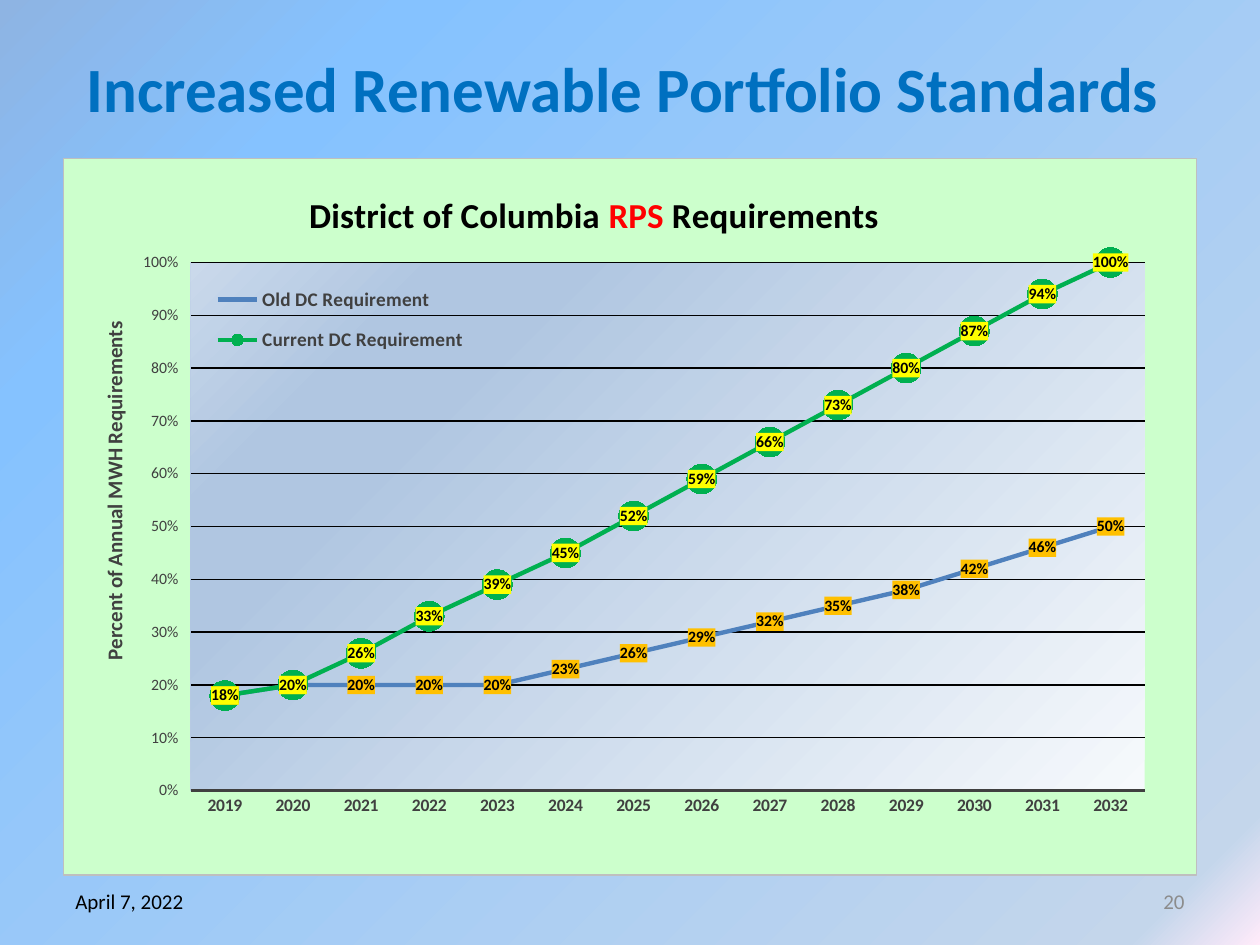
from pptx import Presentation
from pptx.chart.data import CategoryChartData
from pptx.dml.color import RGBColor
from pptx.enum.chart import (XL_CHART_TYPE, XL_LABEL_POSITION, XL_LEGEND_POSITION,
                             XL_MARKER_STYLE, XL_TICK_MARK)
from pptx.enum.text import MSO_ANCHOR, PP_ALIGN
from pptx.oxml import parse_xml
from pptx.oxml.ns import nsdecls
from pptx.util import Inches, Pt

FONT = "Calibri"
COLORS = {
    "heading": "0070C0", "black": "000000", "gray": "404040", "number": "8C8C8C",
    "red": "FF0000", "panel": "CCFFCC", "border": "BFBFBF", "old": "4F81BD",
    "current": "00B050", "old_label": "FFC000", "current_label": "FFFF00",
}
BACKGROUND = [(0, "8EB4E3"), (19, "85C2FF"), (94, "C4D6EB"), (100, "FFEBFA")]
PLOT_GRADIENT = [(0, "F6F9FC"), (74, "B0C6E1"), (83, "B0C6E1"), (100, "CAD9EB")]

HEADING = "Increased Renewable Portfolio Standards "
CHART_TITLE = [("District of Columbia ", "black"), ("RPS", "red"), (" Requirements", "black")]
AXIS_TITLE = [("Percent of Annual MWH Requirements", "gray")]
YEARS = [str(year) for year in range(2019, 2033)]
REQUIREMENTS = [
    ("Old DC Requirement", "old",
     [.18, .2, .2, .2, .2, .23, .26, .29, .32, .35, .38, .42, .46, .5]),
    ("Current DC Requirement", "current",
     [.18, .2, .26, .33, .39, .45, .52, .59, .66, .73, .8, .87, .94, 1]),
]
# text, left, color, alignment
FOOTERS = [("April 7, 2022", 0.5, "black", PP_ALIGN.LEFT),
           ("20", 7.17, "number", PP_ALIGN.RIGHT)]
CHART_WIDTH, CHART_HEIGHT = 9, 5.7


def set_values(target, **values):
    for name, value in values.items():
        setattr(target, name, value)


def style_font(font, size, color, bold=False):
    set_values(font, name=FONT, size=Pt(size), bold=bold)
    font.color.rgb = RGBColor.from_string(COLORS[color])


def style_line(line, color, width):
    line.color.rgb = RGBColor.from_string(COLORS[color])
    line.width = Pt(width)


def gradient(stops, angle):
    marks = "".join(f'<a:gs pos="{pos * 1000}"><a:srgbClr val="{color}"/></a:gs>'
                    for pos, color in stops)
    return (f'<a:gradFill {nsdecls("a")} rotWithShape="1"><a:gsLst>{marks}</a:gsLst>'
            f'<a:lin ang="{angle * 60000}" scaled="0"/></a:gradFill>')


def solid(color):
    return f'<a:solidFill><a:srgbClr val="{COLORS[color]}"/></a:solidFill>'


def chart_fill(fill, line="<a:noFill/>"):
    """Shape properties for chart parts that have no public fill."""
    return parse_xml(f'<c:spPr {nsdecls("c", "a")}>{fill}<a:ln w="9525">{line}</a:ln></c:spPr>')


def place(part, left, top, width=None, height=None, inner=False):
    """Position a chart part, in inches from the chart's top left corner."""
    for old in part.xpath("c:layout"):
        part.remove(old)
    values = [("layoutTarget", "inner")] if inner else []
    values += [("xMode", "edge"), ("yMode", "edge"),
               ("x", left / CHART_WIDTH), ("y", top / CHART_HEIGHT)]
    if width:
        values += [("w", width / CHART_WIDTH), ("h", height / CHART_HEIGHT)]
    items = "".join(f'<c:{name} val="{value}"/>' for name, value in values)
    layout = parse_xml(f'<c:layout {nsdecls("c")}><c:manualLayout>{items}'
                       '</c:manualLayout></c:layout>')
    overlay = part.xpath("c:overlay")
    if overlay:
        overlay[0].addprevious(layout)
    else:
        part.insert(0, layout)


def write_title(title, runs, size):
    paragraph = title.text_frame.paragraphs[0]
    for text, color in runs:
        run = paragraph.add_run()
        run.text = text
        style_font(run.font, size, color, True)


def style_axes(chart):
    years, percent = chart.category_axis, chart.value_axis
    years.major_tick_mark = XL_TICK_MARK.NONE
    style_font(years.tick_labels.font, 10, "gray", True)
    style_line(years.format.line, "gray", 1.5)
    set_values(percent, minimum_scale=0, maximum_scale=1, major_unit=0.1,
               major_tick_mark=XL_TICK_MARK.OUTSIDE, has_major_gridlines=True)
    set_values(percent.tick_labels, number_format="0%", number_format_is_linked=False)
    style_font(percent.tick_labels.font, 9, "gray")
    percent.format.line.fill.background()
    style_line(percent.major_gridlines.format.line, "black", 0.75)
    write_title(percent.axis_title, AXIS_TITLE, 12)


def style_series(series, key):
    series.smooth = False
    style_line(series.format.line, key, 2.5)
    if key == "current":
        set_values(series.marker, style=XL_MARKER_STYLE.CIRCLE, size=17)
        series.marker.format.fill.solid()
        series.marker.format.fill.fore_color.rgb = RGBColor.from_string(COLORS[key])
        series.marker.format.line.fill.background()
    else:
        series.marker.style = XL_MARKER_STYLE.NONE
    labels = series.data_labels
    set_values(labels, show_value=True, position=XL_LABEL_POSITION.CENTER,
               number_format="0%", number_format_is_linked=False)
    style_font(labels.font, 9, "black", True)


def add_requirements_chart(slide):
    data = CategoryChartData(number_format="0%")
    data.categories = YEARS
    for name, _, values in REQUIREMENTS:
        data.add_series(name, values)
    chart = slide.shapes.add_chart(XL_CHART_TYPE.LINE_MARKERS, Inches(0.5), Inches(1.25),
                                   Inches(CHART_WIDTH), Inches(CHART_HEIGHT), data).chart
    style_font(chart.font, 10, "black")
    set_values(chart, has_title=True, has_legend=True)
    write_title(chart.chart_title, CHART_TITLE, 20)
    set_values(chart.legend, position=XL_LEGEND_POSITION.BOTTOM, include_in_layout=False)
    style_font(chart.legend.font, 11, "gray", True)
    style_axes(chart)
    chart.plots[0].vary_by_categories = False
    for series, (_, key, _) in zip(chart.plots[0].series, REQUIREMENTS):
        style_series(series, key)

    space = chart.element
    for label_text, (_, key, _) in zip(space.xpath(".//c:ser/c:dLbls/c:txPr"), REQUIREMENTS):
        label_text.addprevious(chart_fill(solid(key + "_label")))
    plot_area = space.xpath("c:chart/c:plotArea")[0]
    place(plot_area, 1.01, 0.83, 7.58, 4.2, inner=True)
    place(space.xpath("c:chart/c:title")[0], 1.92, 0.24)
    place(plot_area.xpath("c:valAx/c:title")[0], 0.26, 1.27)
    place(space.xpath("c:chart/c:legend")[0], 1.12, 0.9, 2.16, 0.77)
    plot_area.append(chart_fill(gradient(PLOT_GRADIENT, 225)))
    space.xpath("c:txPr")[0].addprevious(chart_fill(solid("panel"), solid("border")))


def write_text(box, text, size, color, alignment, bold=False):
    frame = box.text_frame
    set_values(frame, word_wrap=True, vertical_anchor=MSO_ANCHOR.MIDDLE)
    paragraph = frame.paragraphs[0]
    paragraph.alignment = alignment
    run = paragraph.add_run()
    run.text = text
    style_font(run.font, size, color, bold)


def main():
    deck = Presentation()
    set_values(deck, slide_width=Inches(10), slide_height=Inches(7.5))
    slide = deck.slides.add_slide(deck.slide_layouts[5])
    slide.background.fill.solid()
    plain = slide.element.xpath("p:cSld/p:bg/p:bgPr/a:solidFill")[0]
    plain.getparent().replace(plain, parse_xml(gradient(BACKGROUND, 45)))

    heading = slide.shapes.title
    set_values(heading, left=Inches(0.5), top=Inches(0.3), width=Inches(9), height=Inches(0.78))
    write_text(heading, HEADING, 36, "heading", PP_ALIGN.CENTER, True)
    add_requirements_chart(slide)
    for text, left, color, alignment in FOOTERS:
        footer = slide.shapes.add_textbox(Inches(left), Inches(6.95), Inches(2.33), Inches(0.4))
        write_text(footer, text, 12, color, alignment)
    deck.save("out.pptx")


if __name__ == "__main__":
    main()
